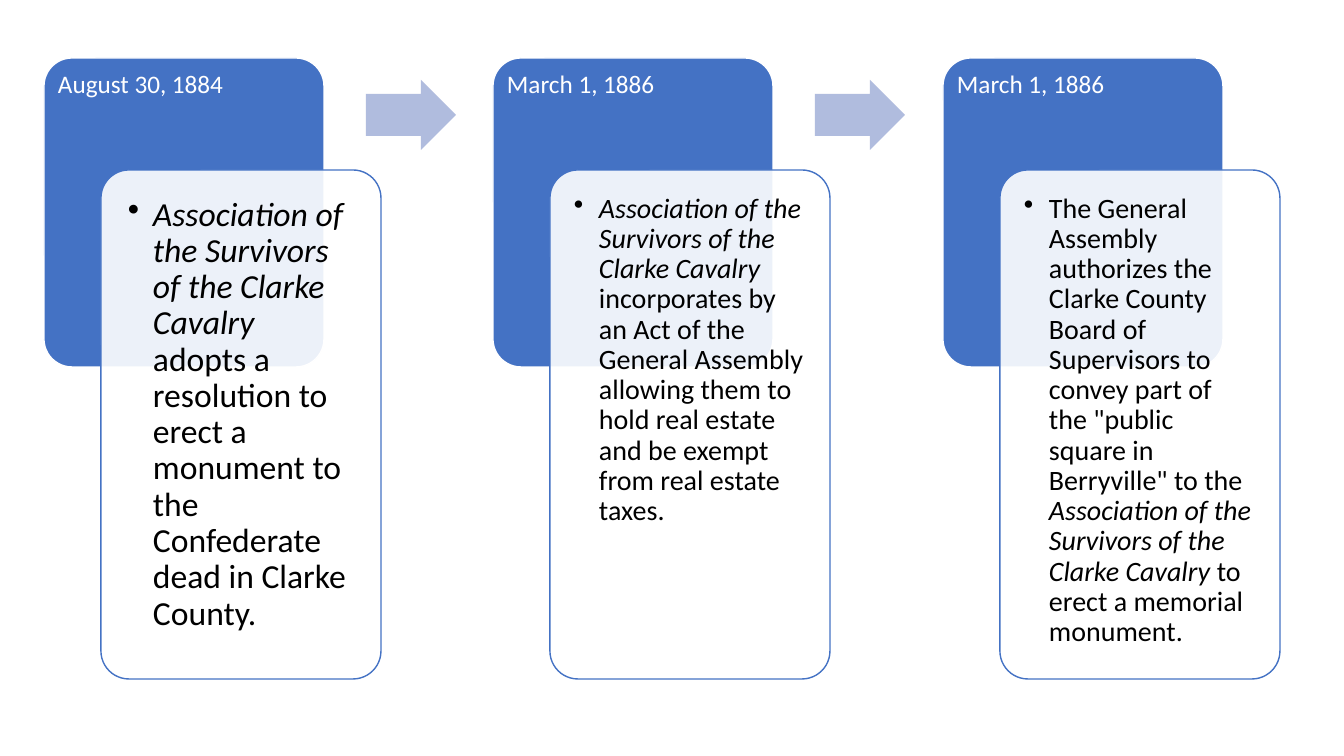
import pptx
import pptx.dml.color
import pptx.enum.shapes
import pptx.enum.text
import pptx.oxml.ns
import pptx.util
from dataclasses import dataclass
from lxml import etree

ASSOCIATION = "Association of the Survivors of the Clarke Cavalry "

# Each detail is a list of (text, italic); size in points, inset in px.
EVENTS = [
    {"date": "August 30, 1884", "size": 24, "inset": 19, "detail": [
        (ASSOCIATION, True),
        ("adopts a resolution to erect a monument to the Confederate dead in Clarke County.", False),
    ]},
    {"date": "March 1, 1886", "size": 20, "inset": 16, "detail": [
        (ASSOCIATION, True),
        ("incorporates by an Act of the General Assembly allowing them to hold real estate "
         "and be exempt from real estate taxes.", False),
    ]},
    {"date": "March 1, 1886", "size": 20, "inset": 16, "detail": [
        ("The General Assembly authorizes the Clarke County Board of Supervisors to convey "
         "part of the \"public square in Berryville\" to the ", False),
        (ASSOCIATION, True),
        ("to erect a memorial monument.", False),
    ]},
]


@dataclass(frozen=True)
class Theme:
    font: str = "Calibri"
    blue: str = "4472C4"
    arrow: str = "B0BCDE"
    white: str = "FFFFFF"
    black: str = "000000"
    date_size: int = 18
    line_width: int = 1
    line_spacing: float = 0.9
    panel_opacity: int = 90


THEME = Theme()
SHAPES = pptx.enum.shapes.MSO_SHAPE

# Layout in px
PAGE_SIZE = (1344, 756)
FIRST_LEFT, LAST_LEFT = 44, 943
CARD_TOP, CARD_WIDTH, CARD_HEIGHT = 58, 280, 309
DATE_HEIGHT = 112
PANEL_SHIFT, PANEL_HEIGHT = 57, 509
PANEL_TOP = CARD_TOP + DATE_HEIGHT
PANEL_MARGIN = 8
ARROW_SHIFT, ARROW_TOP, ARROW_WIDTH, ARROW_HEIGHT = 322, 80, 90, 70
BULLET_INDENT = 25


def px(length):
    return pptx.util.Emu(round(length * 914400 / 100.8))


def rgb(code):
    return pptx.dml.color.RGBColor.from_string(code)


def add_figure(page, kind, frame, adjustments, fill, line=None, opacity=100):
    figure = page.shapes.add_shape(kind, *map(px, frame))
    figure.shadow.inherit = False
    for index, value in enumerate(adjustments):
        figure.adjustments[index] = value
    figure.fill.solid()
    figure.fill.fore_color.rgb = rgb(fill)
    if opacity < 100:
        color = figure.fill._xPr.find(".//" + pptx.oxml.ns.qn("a:srgbClr"))
        etree.SubElement(color, pptx.oxml.ns.qn("a:alpha"), val=str(opacity * 1000))
    if line:
        figure.line.color.rgb = rgb(line)
        figure.line.width = pptx.util.Pt(THEME.line_width)
    else:
        figure.line.fill.background()


def add_bullet(para):
    properties = para._p.get_or_add_pPr()
    properties.set("marL", str(px(BULLET_INDENT)))
    properties.set("indent", str(-px(BULLET_INDENT)))
    etree.SubElement(properties, pptx.oxml.ns.qn("a:buChar"), char="•")


def add_text(page, frame, insets, spans, size, color, bulleted=False):
    box = page.shapes.add_textbox(*map(px, frame)).text_frame
    box.word_wrap = True
    box.vertical_anchor = pptx.enum.text.MSO_ANCHOR.TOP
    box.margin_left, box.margin_top, box.margin_right, box.margin_bottom = map(px, insets)
    para = box.paragraphs[0]
    para.line_spacing = THEME.line_spacing
    if bulleted:
        add_bullet(para)
    for text, italic in spans:
        span = para.add_run()
        span.text = text
        span.font.name = THEME.font
        span.font.size = pptx.util.Pt(size)
        span.font.italic = italic
        span.font.color.rgb = rgb(color)


def add_event(page, event, left):
    add_figure(page, SHAPES.ROUNDED_RECTANGLE, (left, CARD_TOP, CARD_WIDTH, CARD_HEIGHT),
               [0.1], THEME.blue, THEME.white)
    add_text(page, (left, CARD_TOP, CARD_WIDTH, DATE_HEIGHT), (14, 14, 14, 7),
             [(event["date"], False)], THEME.date_size, THEME.white)
    panel_left = left + PANEL_SHIFT
    add_figure(page, SHAPES.ROUNDED_RECTANGLE, (panel_left, PANEL_TOP, CARD_WIDTH, PANEL_HEIGHT),
               [0.1], THEME.white, THEME.blue, THEME.panel_opacity)
    detail_frame = (panel_left + PANEL_MARGIN, PANEL_TOP + PANEL_MARGIN,
                    CARD_WIDTH - 2 * PANEL_MARGIN, PANEL_HEIGHT - 2 * PANEL_MARGIN)
    add_text(page, detail_frame, [event["inset"]] * 4, event["detail"],
             event["size"], THEME.black, bulleted=True)


def main():
    deck = pptx.Presentation()
    deck.slide_width, deck.slide_height = map(px, PAGE_SIZE)
    page = deck.slides.add_slide(deck.slide_layouts[6])
    last = len(EVENTS) - 1
    for index, event in enumerate(EVENTS):
        left = FIRST_LEFT + index * (LAST_LEFT - FIRST_LEFT) // last
        add_event(page, event, left)
        if index < last:
            add_figure(page, SHAPES.RIGHT_ARROW,
                       (left + ARROW_SHIFT, ARROW_TOP, ARROW_WIDTH, ARROW_HEIGHT),
                       [0.6, 0.5], THEME.arrow)
    deck.save("out.pptx")


if __name__ == "__main__":
    main()
